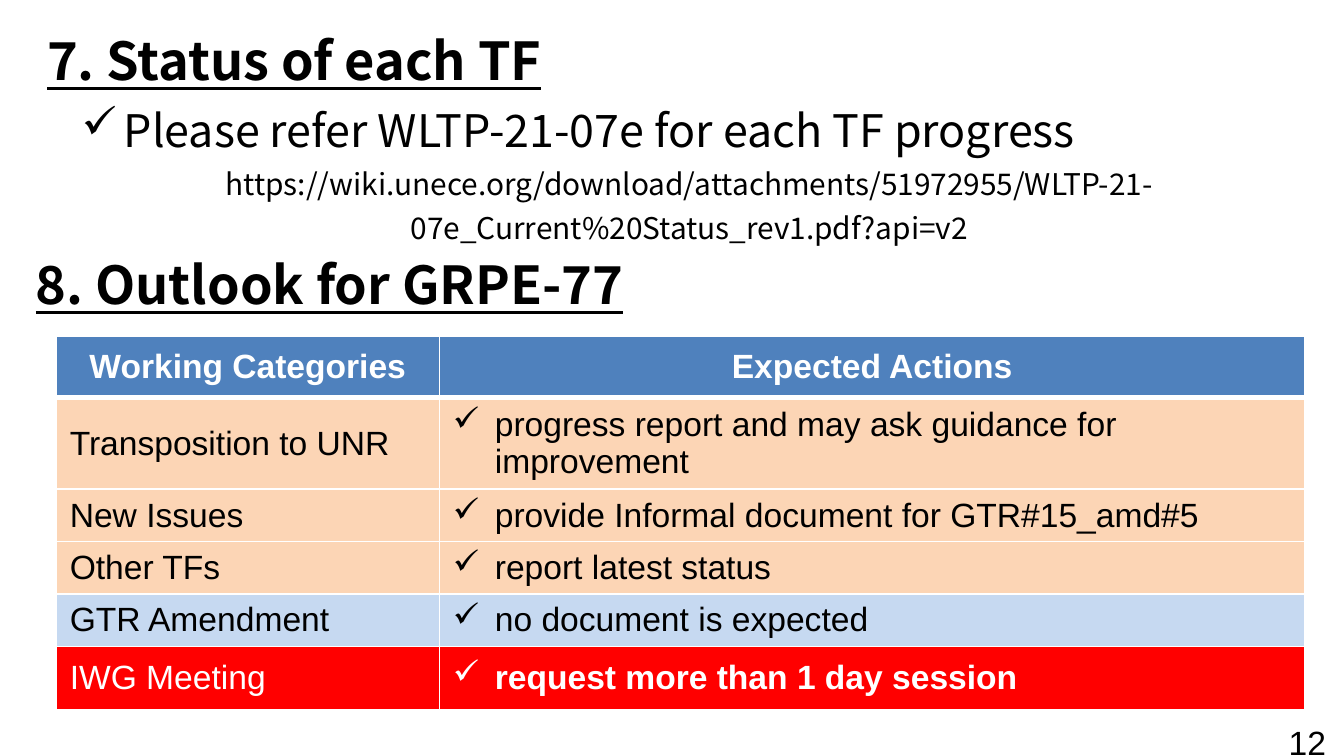
from dataclasses import dataclass

from lxml.etree import SubElement
from pptx import Presentation
from pptx.dml.color import RGBColor
from pptx.enum.text import MSO_ANCHOR, MSO_AUTO_SIZE, PP_ALIGN
from pptx.oxml import parse_xml
from pptx.oxml.ns import nsdecls, qn
from pptx.shapes.autoshape import Shape
from pptx.slide import Slide
from pptx.table import _Cell
from pptx.text.text import _Paragraph
from pptx.util import Pt


@dataclass(frozen=True)
class Theme:
    """Colours, fonts and type sizes of the slide."""

    black: str = "000000"
    white: str = "FFFFFF"
    header: str = "4F81BD"
    report: str = "FCD5B5"
    amendment: str = "C6D9F1"
    alert: str = "FF0000"
    heading_font: str = "Noto Sans CJK JP"
    table_font: str = "Arial"
    heading_size: float = 28
    lead_size: float = 24
    table_size: float = 18
    link_size: float = 16


@dataclass(frozen=True)
class Style:
    """The look of one run of text."""

    font: str
    size: float
    color: str
    bold: bool = False
    underline: bool = False


@dataclass(frozen=True)
class Frame:
    """A position and size in points."""

    left: float
    top: float
    width: float
    height: float


@dataclass(frozen=True)
class OutlookRow:
    """A working category and its expected action."""

    category: str
    action: str
    fill: str
    height: float
    color: str = "000000"
    bold_category: bool = False
    bold_action: bool = False
    is_header: bool = False


THEME = Theme()
HEADING = Style(THEME.heading_font, THEME.heading_size, THEME.black, True, True)
LEAD = Style(THEME.heading_font, THEME.lead_size, THEME.black)
LINK = Style(THEME.heading_font, THEME.link_size, THEME.black)
PAGE_NUMBER = Style(THEME.table_font, THEME.table_size, THEME.black)
HANGING = 22.5
LINE_PITCH = 24
THIN, THICK = 1, 3
COLUMN_WIDTHS = (205.2, 463.7)
OUTLOOK = (
    OutlookRow("Working Categories", "Expected Actions", THEME.header, 33.1,
               THEME.white, True, True, True),
    OutlookRow("Transposition to UNR",
               "progress report and may ask guidance for improvement", THEME.report, 40.3),
    OutlookRow("New Issues", "provide Informal document for GTR#15_amd#5",
               THEME.report, 28.1),
    OutlookRow("Other TFs", "report latest status", THEME.report, 28.1),
    OutlookRow("GTR Amendment", "no document is expected", THEME.amendment, 28.1),
    OutlookRow("IWG Meeting", "request more than 1 day session", THEME.alert, 33.8,
               THEME.white, bold_action=True),
)


def add_span(para: _Paragraph, text: str, style: Style) -> None:
    """Add one formatted run to a paragraph."""
    span = para.add_run()
    span.text = text
    span.font.name = style.font
    span.font.size = Pt(style.size)
    span.font.bold = style.bold
    span.font.underline = style.underline
    span.font.color.rgb = RGBColor.from_string(style.color)


def add_check(para: _Paragraph) -> None:
    """Give a paragraph a hanging check-mark bullet."""
    properties = para._p.get_or_add_pPr()
    properties.set("marL", str(Pt(HANGING)))
    properties.set("indent", str(-Pt(HANGING)))
    SubElement(properties, qn("a:buChar")).set("char", "✓")


def place(box: Shape, frame: Frame, wrap: bool = False) -> None:
    """Position a text shape and set how its text fits."""
    box.left, box.top = Pt(frame.left), Pt(frame.top)
    box.width, box.height = Pt(frame.width), Pt(frame.height)
    box.text_frame.word_wrap = wrap
    box.text_frame.auto_size = MSO_AUTO_SIZE.SHAPE_TO_FIT_TEXT
    box.text_frame.vertical_anchor = MSO_ANCHOR.TOP


def add_box(page: Slide, frame: Frame, wrap: bool = False) -> Shape:
    """Add an empty text box."""
    box = page.shapes.add_textbox(0, 0, 0, 0)
    place(box, frame, wrap)
    return box


def write_line(box: Shape, frame: Frame, text: str, style: Style) -> None:
    """Write a single left-aligned line into a text shape."""
    place(box, frame)
    para = box.text_frame.paragraphs[0]
    para.alignment = PP_ALIGN.LEFT
    add_span(para, text, style)


def add_reference(page: Slide, frame: Frame) -> None:
    """Add the pointer to the progress document and its address."""
    text_frame = add_box(page, frame, True).text_frame
    lead, link = text_frame.paragraphs[0], text_frame.add_paragraph()
    lead.line_spacing = link.line_spacing = Pt(LINE_PITCH)
    add_check(lead)
    add_span(lead, "Please refer WLTP-21-07e for each TF progress", LEAD)
    link.alignment = PP_ALIGN.CENTER
    add_span(link, "https://wiki.unece.org/download/attachments/51972955/"
             "WLTP-21-07e_Current%20Status_rev1.pdf?api=v2", LINK)


def set_borders(cell: _Cell, top: float, bottom: float) -> None:
    """Draw white rules on all four sides of a cell."""
    properties = cell._tc.get_or_add_tcPr()
    sides = (("lnL", THIN), ("lnR", THIN), ("lnT", top), ("lnB", bottom))
    for index, (side, width) in enumerate(sides):
        properties.insert(index, parse_xml(
            f'<a:{side} {nsdecls("a")} w="{Pt(width)}"><a:solidFill>'
            f'<a:srgbClr val="{THEME.white}"/></a:solidFill></a:{side}>'))


def fill_cell(cell: _Cell, row: OutlookRow, text: str, bold: bool, checked: bool) -> None:
    """Fill and format one table cell."""
    cell.fill.solid()
    cell.fill.fore_color.rgb = RGBColor.from_string(row.fill)
    cell.vertical_anchor = MSO_ANCHOR.MIDDLE
    cell.margin_left = cell.margin_right = Pt(7.2)
    cell.margin_top = cell.margin_bottom = Pt(2.9)
    para = cell.text_frame.paragraphs[0]
    para.alignment = PP_ALIGN.CENTER if row.is_header else PP_ALIGN.LEFT
    if checked:
        add_check(para)
    add_span(para, text, Style(THEME.table_font, THEME.table_size, row.color, bold))


def add_outlook(page: Slide, left: float, top: float) -> None:
    """Add the table of expected actions."""
    table = page.shapes.add_table(
        len(OUTLOOK), len(COLUMN_WIDTHS), Pt(left), Pt(top),
        Pt(sum(COLUMN_WIDTHS)), Pt(sum(row.height for row in OUTLOOK))).table
    table.horz_banding = False
    for column, width in zip(table.columns, COLUMN_WIDTHS):
        column.width = Pt(width)
    for index, row in enumerate(OUTLOOK):
        table.rows[index].height = Pt(row.height)
        category, action = table.cell(index, 0), table.cell(index, 1)
        fill_cell(category, row, row.category, row.bold_category, False)
        fill_cell(action, row, row.action, row.bold_action, not row.is_header)
        for cell in (category, action):
            set_borders(cell, THICK if index == 1 else THIN,
                        THICK if row.is_header else THIN)


def main() -> None:
    """Build and save the deck."""
    deck = Presentation()
    deck.slide_width, deck.slide_height = Pt(720), Pt(405)
    page = deck.slides.add_slide(deck.slide_layouts[5])
    write_line(page.shapes.title, Frame(18, 11.5, 311.8, 41), "7. Status of each TF", HEADING)
    add_reference(page, Frame(36.7, 56.2, 665.3, 80))
    outlook_frame = Frame(12.2, 131.8, 362.9, 41)
    write_line(add_box(page, outlook_frame), outlook_frame, "8. Outlook for GRPE-77", HEADING)
    add_outlook(page, 30.2, 180)
    number_frame = Frame(683.3, 383, 36.7, 28.8)
    write_line(add_box(page, number_frame), number_frame, "12", PAGE_NUMBER)
    deck.save("out.pptx")


if __name__ == "__main__":
    main()
